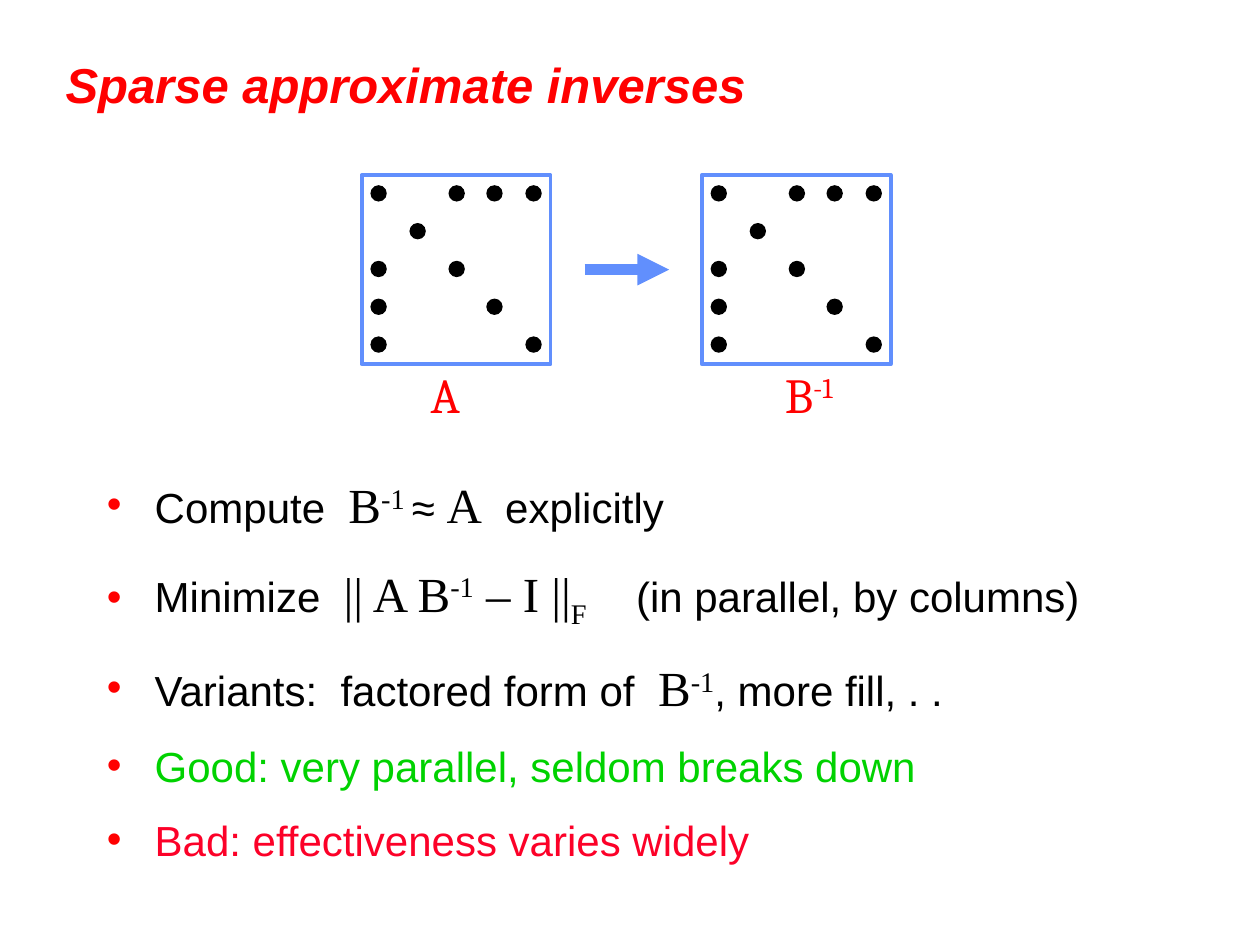
from dataclasses import dataclass
from typing import NamedTuple, Optional

from lxml.etree import SubElement
from pptx import Presentation
from pptx.dml.color import RGBColor as RGB
from pptx.enum.shapes import MSO_CONNECTOR as CONNECTOR, MSO_SHAPE as SHAPE
from pptx.enum.text import MSO_ANCHOR as ANCHOR, MSO_AUTO_SIZE as AUTOSIZE, PP_ALIGN as ALIGN
from pptx.oxml.ns import qn
from pptx.util import Emu, Pt


@dataclass(frozen=True)
class Theme:
    sans: str = "Arial"
    serif: str = "Times New Roman"
    label: str = "Cambria"
    red: str = "FF0000"
    blue: str = "618FFD"
    black: str = "000000"
    good: str = "00D200"
    bad: str = "FC0128"
    large: int = 28
    normal: int = 24


class Span(NamedTuple):
    text: str
    math: bool = False
    baseline: int = 0


class Bullet(NamedTuple):
    spans: list[Span]
    color: str
    tab: Optional[int] = None


class Matrix(NamedTuple):
    left: int
    label: list[Span]
    label_left: int
    label_width: int


T = Theme()
MATRIX_TOP, MATRIX_SIZE = 139, 150
DOT, DOT_INSET, DOT_SPAN_X, DOT_SPAN_Y = 13, 7, 123, 120
INDENT = 38
PATTERN = ["*.***", ".*...", "*.*..", "*..*.", "*...*"]

INVERSE = [Span("B", True), Span("-1", True, 30)]
MATRICES = [
    Matrix(287, [Span("A")], 332, 48),
    Matrix(557, [Span("B"), Span("-1", baseline=30)], 613, 68),
]
BULLETS = [
    Bullet([Span("Compute  "), Span("B", True), Span("-1 ", True, 30), Span("≈ "),
            Span("A", True), Span("  explicitly")], T.black),
    Bullet([Span("Minimize  "), Span("|| A B", True), Span("-1", True, 30),
            Span(" – I ||", True), Span("F", True, -25),
            Span("\t(in parallel, by columns)")], T.black, tab=420),
    Bullet([Span("Variants:  factored form of  "), *INVERSE,
            Span(", more fill, . .")], T.black),
    Bullet([Span("Good: very parallel, seldom breaks down")], T.good),
    Bullet([Span("Bad: effectiveness varies widely")], T.bad),
]


def px(n: int) -> Emu:
    """Length of n px, at 100 px to the inch."""
    return Emu(n * 9144)


def add_run(p, text: str, *, font: str, size: int, color: str,
            bold: bool = False, italic: bool = False, baseline: int = 0) -> None:
    r = p.add_run()
    r.text = text
    f = r.font
    f.name, f.size, f.bold, f.italic = font, Pt(size), bold, italic
    f.color.rgb = RGB.from_string(color)
    if baseline:
        r._r.get_or_add_rPr().set("baseline", str(baseline * 1000))


def add_title(s, text: str) -> None:
    sp = s.shapes.title
    sp.left, sp.top, sp.width, sp.height = px(42), px(33), px(933), px(67)
    tf = sp.text_frame
    tf.vertical_anchor, tf.auto_size = ANCHOR.MIDDLE, AUTOSIZE.NONE
    p = tf.paragraphs[0]
    p.alignment = ALIGN.LEFT
    add_run(p, text, font=T.sans, size=T.large, color=T.red, bold=True, italic=True)


def format_bullet(p, tab: Optional[int]) -> None:
    p.line_spacing = 1.3
    pPr = p._p.get_or_add_pPr()
    pPr.set("marL", str(px(INDENT)))
    pPr.set("indent", str(-px(INDENT)))
    SubElement(SubElement(pPr, qn("a:spcBef")), qn("a:spcPct"), val="20000")
    SubElement(SubElement(pPr, qn("a:buClr")), qn("a:srgbClr"), val=T.red)
    SubElement(pPr, qn("a:buFont"), typeface=T.sans)
    SubElement(pPr, qn("a:buChar"), char="•")
    if tab is not None:
        tabs = SubElement(pPr, qn("a:tabLst"))
        SubElement(tabs, qn("a:tab"), pos=str(px(tab)), algn="l")


def add_bullets(s, bullets: list[Bullet]) -> None:
    tf = s.shapes.add_textbox(px(75), px(358), px(850), px(367)).text_frame
    tf.word_wrap = True
    for i, bullet in enumerate(bullets):
        p = tf.add_paragraph() if i else tf.paragraphs[0]
        format_bullet(p, bullet.tab)
        for span in bullet.spans:
            add_run(p, span.text, font=T.serif if span.math else T.sans,
                    size=T.large if span.math else T.normal,
                    color=bullet.color, baseline=span.baseline)


def add_dot(shapes, left: int, top: int) -> None:
    sp = shapes.add_shape(SHAPE.OVAL, px(left), px(top), px(DOT), px(DOT))
    sp.shadow.inherit = False
    sp.fill.solid()
    sp.fill.fore_color.rgb = RGB.from_string(T.black)
    sp.line.fill.background()


def add_matrix(shapes, m: Matrix) -> None:
    steps = len(PATTERN) - 1
    for row, cells in enumerate(PATTERN):
        for col, cell in enumerate(cells):
            if cell == "*":
                add_dot(shapes, m.left + DOT_INSET + round(col * DOT_SPAN_X / steps),
                        MATRIX_TOP + DOT_INSET + 1 + round(row * DOT_SPAN_Y / steps))
    sp = shapes.add_shape(SHAPE.RECTANGLE, px(m.left), px(MATRIX_TOP),
                          px(MATRIX_SIZE), px(MATRIX_SIZE))
    sp.shadow.inherit = False
    sp.fill.background()
    sp.line.color.rgb = RGB.from_string(T.blue)
    sp.line.width = Pt(2.25)


def add_label(shapes, m: Matrix) -> None:
    tf = shapes.add_textbox(px(m.label_left), px(284), px(m.label_width), px(57)).text_frame
    tf.word_wrap, tf.auto_size = False, AUTOSIZE.SHAPE_TO_FIT_TEXT
    for span in m.label:
        add_run(tf.paragraphs[0], span.text, font=T.label, size=T.large,
                color=T.red, baseline=span.baseline)


def add_arrow(shapes, left: int, right: int, y: int) -> None:
    c = shapes.add_connector(CONNECTOR.STRAIGHT, px(left), px(y), px(right), px(y))
    c.line.color.rgb = RGB.from_string(T.blue)
    c.line.width = Pt(6)
    SubElement(c.line._get_or_add_ln(), qn("a:tailEnd"), type="triangle")
    SubElement(c._element.spPr, qn("a:effectLst"))


def main() -> None:
    prs = Presentation()
    prs.slide_width, prs.slide_height = px(1000), px(750)
    s = prs.slides.add_slide(prs.slide_layouts[5])
    add_title(s, "Sparse approximate inverses")
    add_bullets(s, BULLETS)
    diagram = s.shapes.add_group_shape().shapes
    for m in MATRICES:
        add_matrix(diagram, m)
    add_arrow(diagram, 464, 531, MATRIX_TOP + MATRIX_SIZE // 2)
    for m in MATRICES:
        add_label(diagram, m)
    prs.save("out.pptx")


if __name__ == "__main__":
    main()
